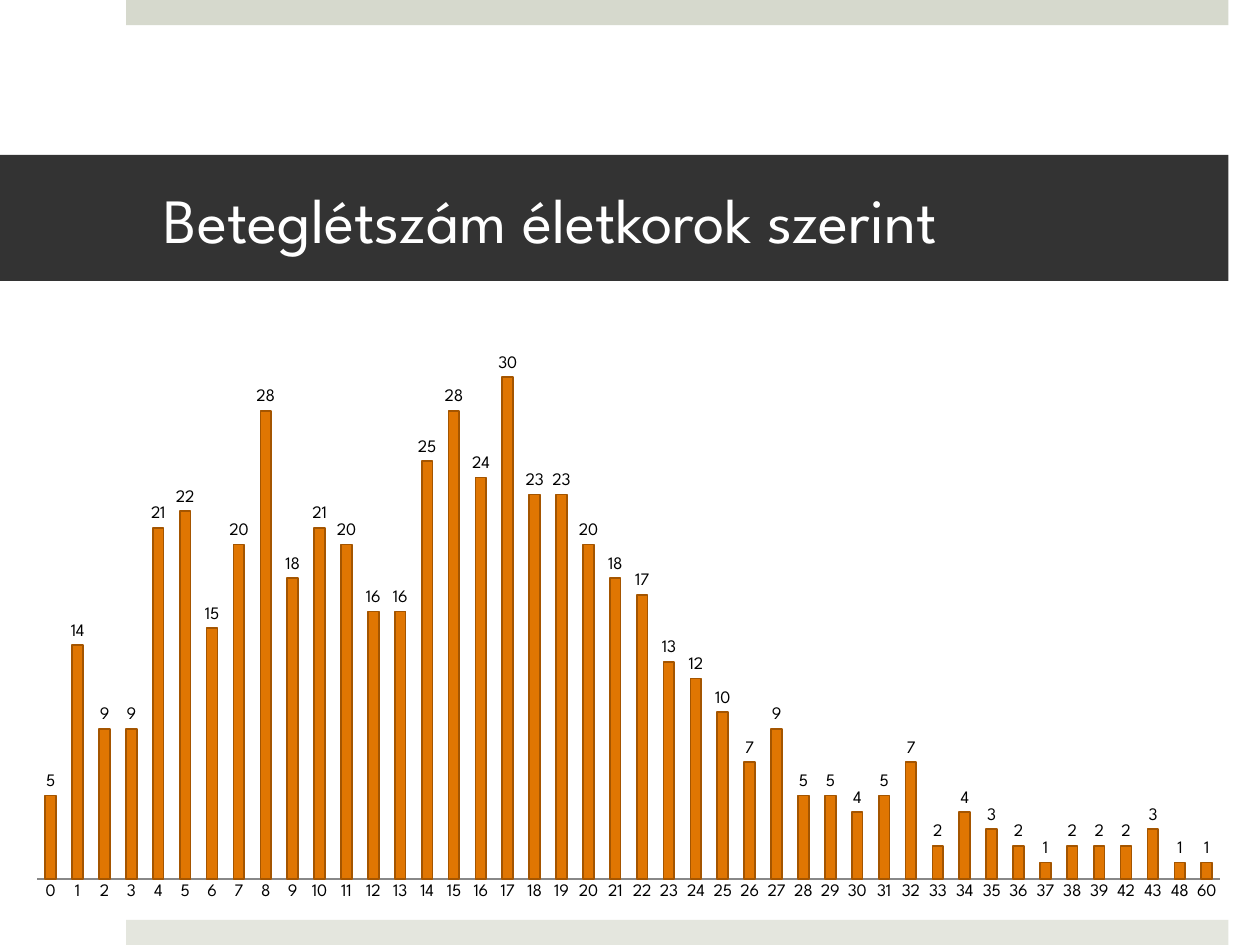
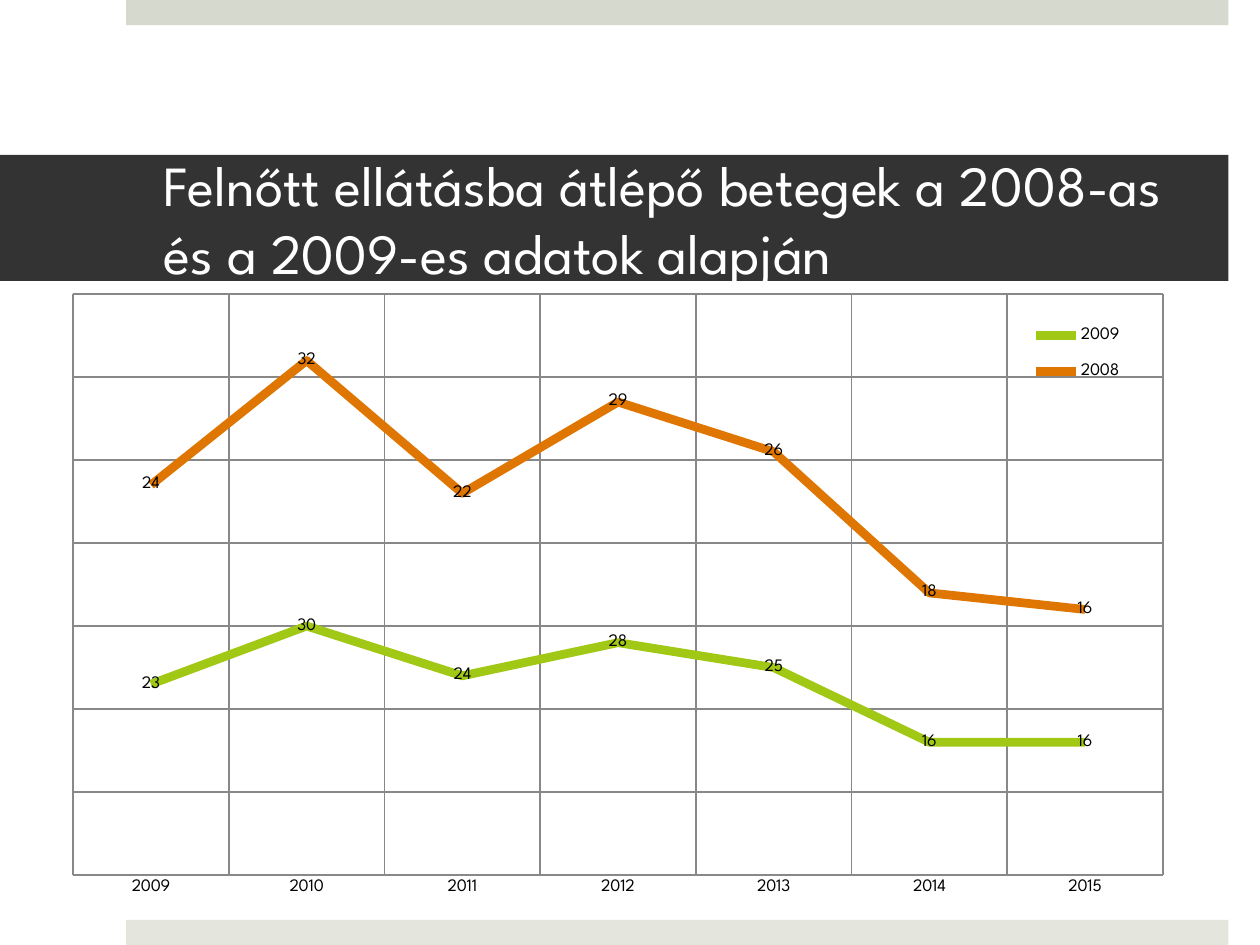
from lxml import etree
from pptx import Presentation
from pptx import util as u
from pptx.chart import data
from pptx.dml.color import RGBColor
from pptx.enum import chart as kinds, shapes, text
from pptx.oxml.ns import qn

FONT = "League Spartan"
WHITE, BLACK, DARK, GREY = "FFFFFF", "000000", "333333", "888888"
TOP, FOOT = "D6D9CD", "E4E6DE"
ORANGE, BROWN, LIME = "E07602", "A45500", "A2C816"


def color(code):
    """Turn a hex string into a colour."""
    return RGBColor.from_string(code)


def place(node, spot, index, inner=False):
    """Fix the left, top, width and height of a chart part as fractions."""
    for old in node.findall(qn("c:layout")):
        node.remove(old)
    layout = etree.Element(qn("c:layout"))
    manual = etree.SubElement(layout, qn("c:manualLayout"))
    pairs = [("layoutTarget", "inner")] if inner else []
    pairs += [("xMode", "edge"), ("yMode", "edge"), *zip("xywh", spot)]
    for name, value in pairs:
        etree.SubElement(manual, qn("c:" + name)).set("val", str(value))
    node.insert(index, layout)


class Deck:
    """Hold the style and the current slide."""

    def __init__(self):
        """Start an empty deck of 10 by 7.5 inches."""
        self.prs = Presentation()
        self.prs.slide_width = u.Inches(10)
        self.prs.slide_height = u.Inches(7.5)
        self.slide = None

    def page(self, title, size):
        """Add a slide with its bands and title."""
        self.slide = self.prs.slides.add_slide(self.prs.slide_layouts[6])
        self.band(1, 0, 8.75, 0.2, TOP)
        self.band(1, 7.3, 8.75, 0.2, FOOT)
        self.title(title, size)

    def band(self, left, top, width, height, fill):
        """Add a plain filled rectangle."""
        box = self.slide.shapes.add_shape(
            shapes.MSO_SHAPE.RECTANGLE, *map(u.Inches, (left, top, width, height)))
        box.shadow.inherit = False
        box.fill.solid()
        box.fill.fore_color.rgb = color(fill)
        box.line.fill.background()
        return box

    def title(self, words, size):
        """Add the dark title band."""
        frame = self.band(0, 1.23, 9.75, 1, DARK).text_frame
        frame.word_wrap = True
        frame.vertical_anchor = text.MSO_ANCHOR.MIDDLE
        frame.margin_left, frame.margin_right = u.Inches(1.3), u.Inches(0.3)
        frame.margin_top = frame.margin_bottom = u.Inches(0.05)
        para = frame.paragraphs[0]
        para.alignment = text.PP_ALIGN.LEFT
        run = para.add_run()
        run.text = words
        run.font.size, run.font.name = u.Pt(size), FONT
        run.font.color.rgb = color(WHITE)

    def chart(self, kind, box, cats, rows, top, step, plot, label):
        """Add a chart with value labels and a hidden value axis."""
        source = data.CategoryChartData()
        source.categories = [str(cat) for cat in cats]
        for name, values in rows:
            source.add_series(name, values)
        chart = self.slide.shapes.add_chart(kind, *map(u.Inches, box), source).chart
        chart.has_title = chart.has_legend = False
        chart.font.name, chart.font.size = FONT, u.Pt(10)
        chart.font.color.rgb = color(BLACK)
        axis = chart.value_axis
        axis.visible = axis.has_major_gridlines = False
        axis.minimum_scale, axis.maximum_scale, axis.major_unit = 0, top, step
        chart.category_axis.major_tick_mark = kinds.XL_TICK_MARK.NONE
        place(chart._chartSpace.chart.plotArea, plot, 0, inner=True)
        body = chart.plots[0]
        body.vary_by_categories = False
        body.has_data_labels = True
        body.data_labels.show_value = True
        body.data_labels.position = label
        return chart

    def bars(self, box, cats, values):
        """Add a column chart with outlined bars."""
        chart = self.chart(
            kinds.XL_CHART_TYPE.COLUMN_CLUSTERED, box, cats, [("Series 1", values)],
            35, 5, (0.02, 0.02, 0.96, 0.93), kinds.XL_LABEL_POSITION.OUTSIDE_END)
        self.rule(chart.category_axis.format.line, GREY, 1)
        body = chart.plots[0]
        body.gap_width, body.overlap = 150, -25
        style = body.series[0].format
        style.fill.solid()
        style.fill.fore_color.rgb = color(ORANGE)
        self.rule(style.line, BROWN, 1)

    def lines(self, box, cats, rows, hues):
        """Add a stacked line chart with a full grid and a legend."""
        chart = self.chart(
            kinds.XL_CHART_TYPE.LINE_STACKED, box, cats, rows,
            70, 10, (0.02, 0.02, 0.96, 0.88), kinds.XL_LABEL_POSITION.CENTER)
        for axis in (chart.category_axis, chart.value_axis):
            axis.has_major_gridlines = True
            self.rule(axis.major_gridlines.format.line, GREY, 1)
        chart.category_axis.format.line.fill.background()
        for row, hue in zip(chart.plots[0].series, hues):
            row.smooth = False
            row.marker.style = kinds.XL_MARKER_STYLE.NONE
            self.rule(row.format.line, hue, 5)
        chart.has_legend = True
        chart.legend.position = kinds.XL_LEGEND_POSITION.BOTTOM
        chart.legend.include_in_layout = False
        place(chart.legend._element, (0.85, 0.04, 0.11, 0.14), 1)

    def rule(self, line, hue, width):
        """Set the colour and width of a line."""
        line.color.rgb = color(hue)
        line.width = u.Pt(width)


def main():
    """Build both slides."""
    deck = Deck()
    deck.page("Beteglétszám életkorok szerint", 36)
    ages = [*range(40), 42, 43, 48, 60]
    counts = [5, 14, 9, 9, 21, 22, 15, 20, 28, 18, 21, 20, 16, 16, 25,
              28, 24, 30, 23, 23, 20, 18, 17, 13, 12, 10, 7, 9, 5, 5,
              4, 5, 7, 2, 4, 3, 2, 1, 2, 2, 2, 3, 1, 1]
    deck.bars((0.1, 2.23, 9.78, 5), ages, counts)

    deck.page("Felnőtt ellátásba átlépő betegek a 2008-as "
              "és a 2009-es adatok alapján", 32.4)
    rows = [("2009", (23, 30, 24, 28, 25, 16, 16)),
            ("2008", (24, 32, 22, 29, 26, 18, 16))]
    deck.lines((0.4, 2.23, 9.01, 5.24), range(2009, 2016), rows, (LIME, ORANGE))
    deck.prs.save("out.pptx")


if __name__ == "__main__":
    main()
